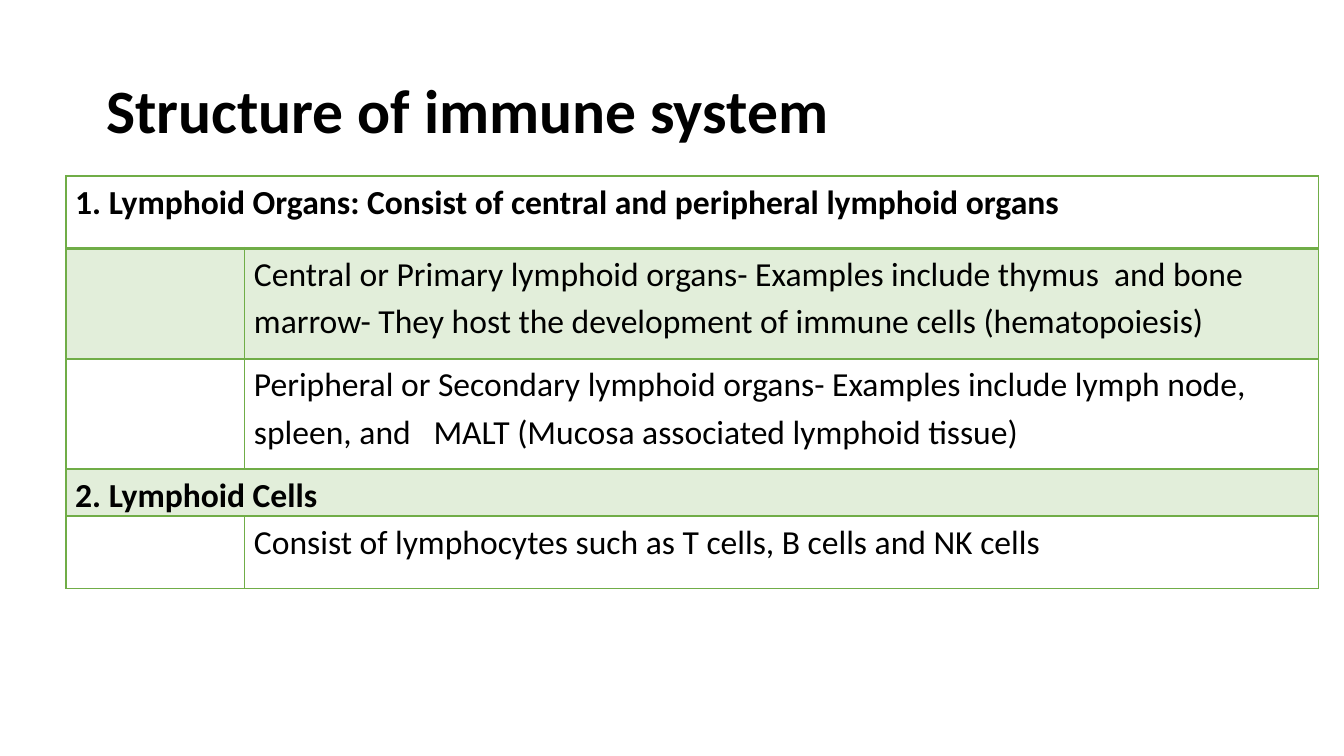
from lxml import etree
from pptx import Presentation
from pptx.dml.color import RGBColor
from pptx.enum.text import MSO_ANCHOR, PP_ALIGN
from pptx.oxml.ns import qn
from pptx.util import Inches, Pt

TITLE_ONLY = 5
MIDDLE = MSO_ANCHOR.MIDDLE
TOP = MSO_ANCHOR.TOP
LEFT = PP_ALIGN.LEFT

BLACK = RGBColor(0x00, 0x00, 0x00)
GREEN = RGBColor(0x70, 0xAD, 0x47)
BAND_OPACITY = 20
FONT_NAME = "Calibri"

SLIDE_WIDTH = Inches(10)
SLIDE_HEIGHT = SLIDE_WIDTH * 9 // 16

COLUMN_WIDTHS = [1.33, 7.99]
# Row height, whether the row is a heading over both columns, and its text
ROWS = [
    (0.54, True, "1. Lymphoid Organs: Consist of central and peripheral lymphoid organs"),
    (0.82, False, "Central or Primary lymphoid organs- Examples include thymus  and bone "
                  "marrow- They host the development of immune cells (hematopoiesis)"),
    (0.82, False, "Peripheral or Secondary lymphoid organs- Examples include lymph node, "
                  "spleen, and   MALT (Mucosa associated lymphoid tissue)"),
    (0.29, True, "2. Lymphoid Cells"),
    (0.54, False, "Consist of lymphocytes such as T cells, B cells and NK cells"),
]


def set_attributes(target, values):
    for name, value in values.items():
        setattr(target, name, value)


def write_text(text_frame, text, size, bold, line_spacing):
    text_frame.text = text
    paragraph = text_frame.paragraphs[0]
    set_attributes(paragraph, {"alignment": LEFT, "line_spacing": line_spacing})
    font = paragraph.runs[0].font
    set_attributes(font, {"name": FONT_NAME, "size": Pt(size), "bold": bold})
    font.color.rgb = BLACK


def add_title(slide, text):
    title = slide.shapes.title
    set_attributes(title, {"left": Inches(0.69), "top": Inches(0.3),
                           "width": Inches(8.62), "height": Inches(1.09)})
    set_attributes(title.text_frame, {"vertical_anchor": MIDDLE, "word_wrap": True})
    write_text(title.text_frame, text, 33, True, 0.9)


def add_borders(cell, bottom_width):
    properties = cell._tc.get_or_add_tcPr()
    widths = {"a:lnL": 1, "a:lnR": 1, "a:lnT": 1, "a:lnB": bottom_width}
    for position, (tag, width) in enumerate(widths.items()):
        line = etree.Element(qn(tag), w=str(Pt(width)))
        fill = etree.SubElement(line, qn("a:solidFill"))
        etree.SubElement(fill, qn("a:srgbClr"), val=str(GREEN))
        properties.insert(position, line)


def fill_cell(cell, banded):
    if not banded:
        cell.fill.background()
        return
    cell.fill.solid()
    cell.fill.fore_color.rgb = GREEN
    color = cell._tc.tcPr.find(qn("a:solidFill")).find(qn("a:srgbClr"))
    etree.SubElement(color, qn("a:alpha"), val=str(BAND_OPACITY * 1000))


def add_structure_table(slide):
    height = sum(row[0] for row in ROWS)
    frame = slide.shapes.add_table(
        len(ROWS), len(COLUMN_WIDTHS), Inches(0.49), Inches(1.31),
        Inches(sum(COLUMN_WIDTHS)), Inches(height))
    table = frame.table
    set_attributes(table, {"first_row": False, "horz_banding": False})
    for column, width in zip(table.columns, COLUMN_WIDTHS):
        column.width = Inches(width)

    for index, (row_height, is_heading, text) in enumerate(ROWS):
        table.rows[index].height = Inches(row_height)
        cells = list(table.rows[index].cells)
        for cell in cells:
            set_attributes(cell, {
                "margin_left": Inches(0.07), "margin_right": Inches(0.07),
                "margin_top": 0, "margin_bottom": 0, "vertical_anchor": TOP})
            fill_cell(cell, banded=index % 2 == 1)
            add_borders(cell, bottom_width=2 if index == 0 else 1)
        if is_heading:
            cells[0].merge(cells[1])
        text_cell = cells[0] if is_heading else cells[1]
        write_text(text_cell.text_frame, text, 18, is_heading, 1.15)


def main():
    presentation = Presentation()
    set_attributes(presentation, {"slide_width": SLIDE_WIDTH, "slide_height": SLIDE_HEIGHT})
    slide = presentation.slides.add_slide(presentation.slide_layouts[TITLE_ONLY])
    add_title(slide, "Structure of immune system")
    add_structure_table(slide)
    presentation.save("out.pptx")


if __name__ == "__main__":
    main()
